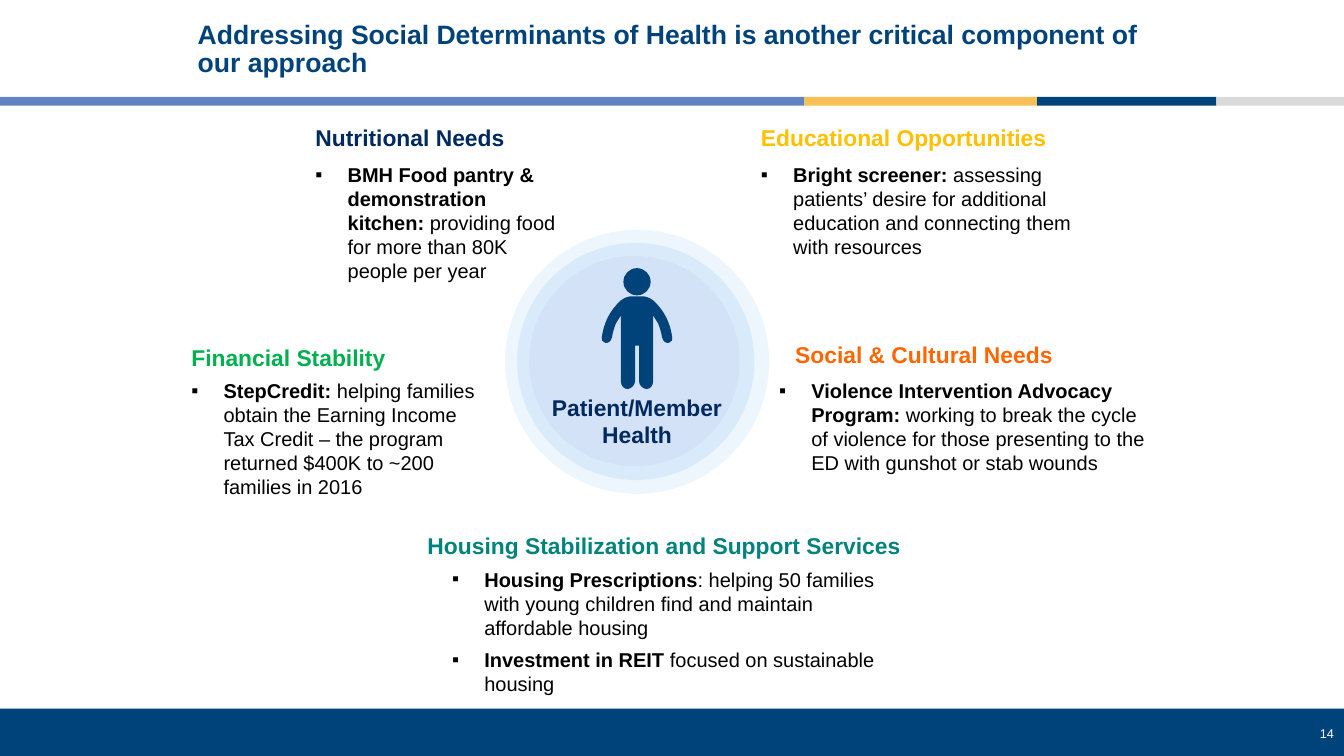
"""Build the slide on social determinants of health around a patient figure."""
from lxml import etree
from pptx import Presentation
from pptx import util as u
from pptx.dml.color import RGBColor
from pptx.enum import shapes, text
from pptx.oxml import ns

BLUE = RGBColor(0x00, 0x43, 0x7B)
NAVY = RGBColor(0x00, 0x29, 0x60)
PERIWINKLE = RGBColor(0x62, 0x83, 0xC2)
AMBER = RGBColor(0xF8, 0xBF, 0x56)
GRAY = RGBColor(0xD9, 0xD9, 0xD9)
SKY = RGBColor(0xC7, 0xE0, 0xFB)
PALE = RGBColor(0xD4, 0xE2, 0xF8)
YELLOW = RGBColor(0xFF, 0xC0, 0x00)
GREEN = RGBColor(0x00, 0xB0, 0x50)
ORANGE = RGBColor(0xFF, 0x66, 0x00)
TEAL = RGBColor(0x00, 0x83, 0x7B)
BLACK = RGBColor(0x00, 0x00, 0x00)
WHITE = RGBColor(0xFF, 0xFF, 0xFF)
LEFT, CENTER, RIGHT = text.PP_ALIGN.LEFT, text.PP_ALIGN.CENTER, text.PP_ALIGN.RIGHT

presentation = Presentation()
presentation.slide_width = u.Inches(13.33)
presentation.slide_height = u.Inches(7.5)
slide = presentation.slides.add_slide(presentation.slide_layouts[6])
COLUMN = presentation.slide_width / 100
ROW = presentation.slide_height / 100
INDENT = int(2.4 * COLUMN)


def paint(shape, color, alpha=100):
    """Fill a shape without line or shadow."""
    shape.shadow.inherit = False
    shape.line.fill.background()
    shape.fill.solid()
    shape.fill.fore_color.rgb = color
    if alpha < 100:
        tint = shape.fill._xPr.find(".//" + ns.qn("a:srgbClr"))
        etree.SubElement(tint, ns.qn("a:alpha")).set("val", str(alpha * 1000))


def add_text(box, paragraphs, size, color, align=LEFT, bullet=False):
    """Add a text box; each paragraph is a list of (words, bold) runs."""
    left, top, width, height = box
    shape = slide.shapes.add_textbox(
        int(left * COLUMN), int(top * ROW), int(width * COLUMN), int(height * ROW))
    frame = shape.text_frame
    frame.word_wrap = True
    for index, runs in enumerate(paragraphs):
        paragraph = frame.paragraphs[0] if index == 0 else frame.add_paragraph()
        paragraph.alignment = align
        for words, bold in runs:
            run = paragraph.add_run()
            run.text = words
            run.font.name = "Arial"
            run.font.size = u.Pt(size)
            run.font.bold = bold
            run.font.color.rgb = color
        if bullet:
            if len(paragraphs) > 1:
                paragraph.space_before = paragraph.space_after = u.Pt(3)
            properties = paragraph._p.get_or_add_pPr()
            properties.set("marL", str(INDENT))
            properties.set("indent", str(-INDENT))
            etree.SubElement(properties, ns.qn("a:buFont")).set("typeface", "Arial")
            etree.SubElement(properties, ns.qn("a:buChar")).set("char", "▪")
    return frame


bands = [(0, 93.75, 100, 6.25, BLUE)]
edges = [0, 59.85, 77.17, 90.5, 100]
for start, end, color in zip(edges, edges[1:], [PERIWINKLE, AMBER, BLUE, GRAY]):
    bands.append((start, 12.8, end - start, 1.17, color))
for left, top, width, height, color in bands:
    band = slide.shapes.add_shape(
        shapes.MSO_SHAPE.RECTANGLE,
        int(left * COLUMN), int(top * ROW), int(width * COLUMN), int(height * ROW))
    paint(band, color)

add_text((93.08, 95.33, 6.9, 3.33), [[("14", False)]], 9, WHITE, RIGHT)

for ring, (color, alpha) in enumerate([(SKY, 31), (SKY, 50), (PALE, 100)]):
    side = int((19.65 - 2 * ring) * COLUMN)
    circle = slide.shapes.add_shape(
        shapes.MSO_SHAPE.OVAL, int((37.58 + 0.9 * ring) * COLUMN),
        int((30.4 + 1.73 * ring) * ROW), side, side)
    paint(circle, color, alpha)

title = add_text(
    (13.97, 4.4, 72.15, 4.4),
    [[("Addressing Social Determinants of Health is another critical component of our approach",
       True)]], 19, BLUE)
title.vertical_anchor = text.MSO_ANCHOR.MIDDLE
title.paragraphs[0].line_spacing = 0.9

add_text((36.6, 51.4, 21.6, 8.8), [[("Patient/Member", True)], [("Health", True)]],
         16.3, NAVY, CENTER)

head = [
    (0, 0),
    (-7.5, 0), (-13.5, 6), (-13.5, 13.5),
    (-13.5, 21), (-7.5, 27), (0, 27),
    (7.5, 27), (13.5, 21), (13.5, 13.5),
    (13.5, 6), (7.5, 0), (0, 0),
]
left_half = [
    (-7, 28),
    (-11, 29), (-14, 30), (-16, 32),
    (-27, 42), (-33, 54), (-35, 69),
    (-36, 71), (-34, 73), (-32, 74),
    (-29, 75), (-26, 73), (-25, 69),
    (-24, 64), (-23, 60), (-21, 55),
    (-19, 52), (-18, 50), (-16, 47),
    (-16, 47), (-16, 112), (-16, 112),
    (-16, 117), (-13, 120), (-9, 120),
    (-5, 119), (-2, 116), (-2, 112),
    (-2, 112), (-2, 77), (-2, 77),
]
right_half = [(-x, y) for x, y in reversed(left_half)]
body = left_half + [left_half[-1], right_half[0]] + right_half

unit = COLUMN * 0.075
head, body = [[(47.4 * COLUMN + x * unit, 35.47 * ROW + y * unit) for x, y in contour]
              for contour in (head, body)]
builder = slide.shapes.build_freeform(*head[0])
builder.add_line_segments(head[1:])
builder.move_to(*body[0])
builder.add_line_segments(body[1:])
person = builder.convert_to_shape()
paint(person, BLUE)
segments = list(person._element.iter(ns.qn("a:lnTo")))
for index in range(0, len(segments), 3):
    curve = etree.Element(ns.qn("a:cubicBezTo"))
    segments[index].addprevious(curve)
    for segment in segments[index:index + 3]:
        curve.append(segment[0])
        segment.getparent().remove(segment)

topics = [
    ("Nutritional Needs", NAVY, LEFT, (22.73, 15.73, 22.58), (22.73, 20.8, 20.03, 17.33),
     [[("BMH Food pantry & demonstration kitchen: ", True),
       ("providing food for more than 80K people per year", False)]]),
    ("Educational Opportunities", YELLOW, LEFT, (55.88, 15.73, 23.48), (55.88, 20.8, 26.93, 14.13),
     [[("Bright screener: ", True),
       ("assessing patients’ desire for additional education and connecting them with resources",
        False)]]),
    ("Financial Stability", GREEN, LEFT, (13.5, 44.8, 18.53), (13.5, 49.47, 23.03, 17.33),
     [[("StepCredit:", True),
       (" helping families obtain the Earning Income Tax Credit – the program returned $400K "
        "to ~200 families in 2016", False)]]),
    ("Social & Cultural Needs", ORANGE, LEFT, (58.43, 44.4, 23.48), (57.23, 49.47, 29.55, 14.13),
     [[("Violence Intervention Advocacy Program: ", True),
       ("working to break the cycle of violence for those presenting to the ED with gunshot "
        "or stab wounds", False)]]),
    ("Housing Stabilization and Support Services", TEAL, CENTER,
     (30.23, 69.73, 38.4), (32.9, 74.35, 34.28, 18.53),
     [[("Housing Prescriptions", True),
       (": helping 50 families with young children find and maintain affordable housing", False)],
      [("Investment in REIT ", True), ("focused on sustainable housing", False)]]),
]
for heading, color, align, heading_box, detail_box, details in topics:
    add_text((*heading_box, 5.07), [[(heading, True)]], 16.3, color, align)
    add_text(detail_box, details, 14.3, BLACK, bullet=True)

presentation.save("out.pptx")
